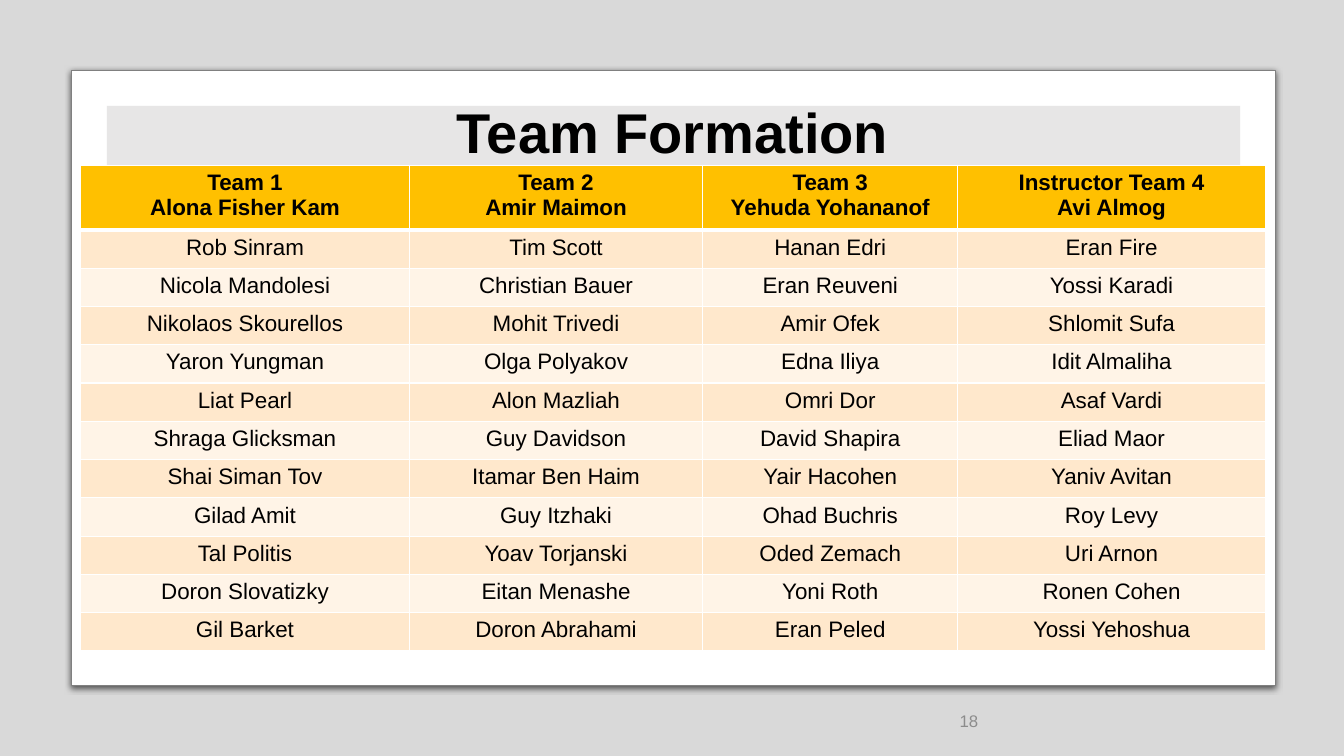
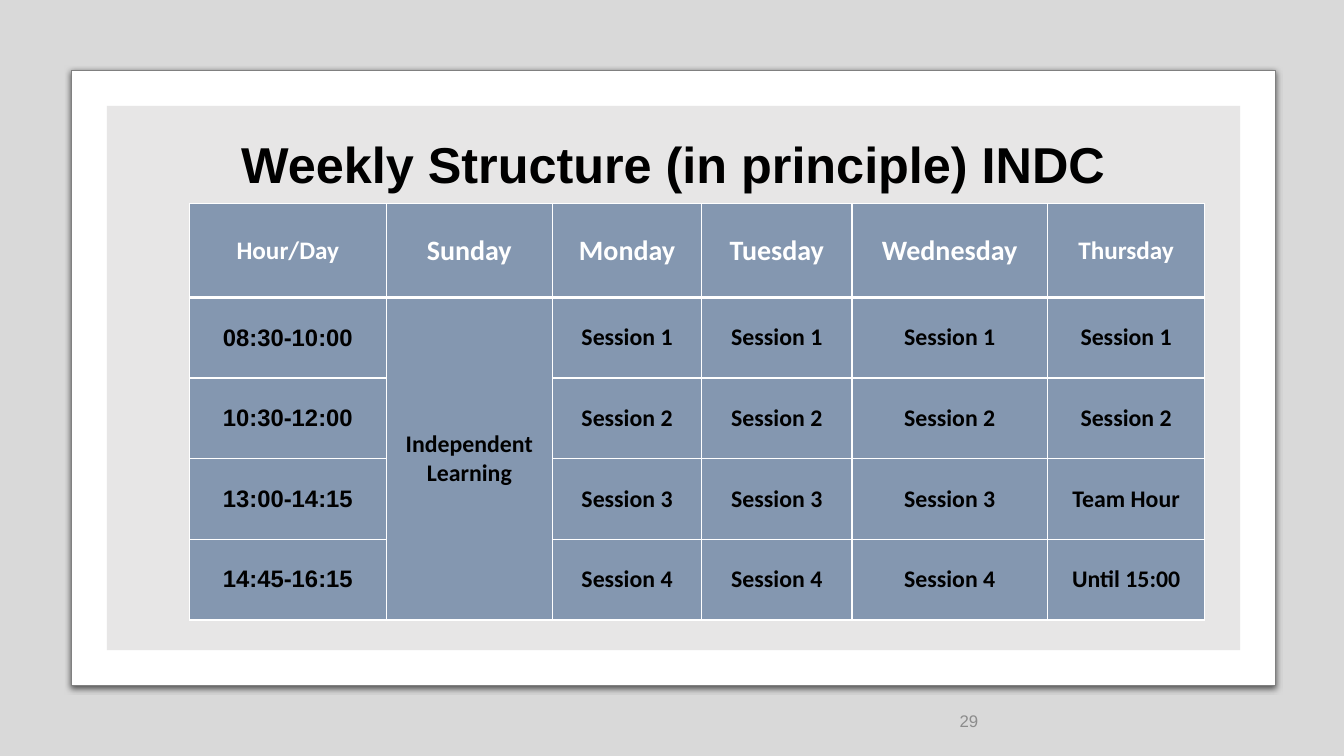
from lxml import etree
from pptx import Presentation
from pptx.dml.color import RGBColor
from pptx.enum.shapes import MSO_SHAPE
from pptx.enum.text import MSO_ANCHOR, PP_ALIGN
from pptx.oxml import parse_xml
from pptx.oxml.ns import nsdecls, qn
from pptx.util import Inches, Pt

COLORS = {
    "black": "000000", "white": "FFFFFF", "edge": "808080", "panel": "E7E6E6",
    "number": "8C8C8C", "gold": "FFC000", "peach": "FFE8CC", "cream": "FFF4E7",
    "slate": "8497B0",
}
TITLE = {"name": "Arial", "bold": True, "color": "black"}
NUMBER = {"name": "Arial", "size": Pt(12), "color": "number"}
TEAM_HEAD = {"name": "Arial", "size": Pt(16), "bold": True, "color": "black"}
TEAM_BODY = {**TEAM_HEAD, "bold": False}
DAY_HEAD = {"name": "Calibri", "size": Pt(20), "bold": True, "color": "white"}
DAY_EDGE = {**DAY_HEAD, "size": Pt(18)}
SESSION = {"name": "Calibri", "size": Pt(17), "bold": True, "color": "black"}
HOURS = {**SESSION, "name": "Arial"}
ROOMY = {"margin_left": Inches(0.17), "margin_right": Inches(0.17),
         "margin_top": Inches(0.08), "margin_bottom": Inches(0.08),
         "vertical_anchor": MSO_ANCHOR.MIDDLE}

TEAMS = [
    ["Team 1\nAlona Fisher Kam", "Team 2\nAmir Maimon",
     "Team 3\nYehuda Yohananof", "Instructor Team 4\nAvi Almog"],
    ["Rob Sinram", "Tim Scott", "Hanan Edri", "Eran Fire"],
    ["Nicola Mandolesi", "Christian Bauer", "Eran Reuveni", "Yossi Karadi"],
    ["Nikolaos Skourellos", "Mohit Trivedi", "Amir Ofek", "Shlomit Sufa"],
    ["Yaron Yungman", "Olga Polyakov", "Edna Iliya", "Idit Almaliha"],
    ["Liat Pearl", "Alon Mazliah", "Omri Dor", "Asaf Vardi"],
    ["Shraga Glicksman", "Guy Davidson", "David Shapira", "Eliad Maor"],
    ["Shai Siman Tov", "Itamar Ben Haim", "Yair Hacohen", "Yaniv Avitan"],
    ["Gilad Amit", "Guy Itzhaki", "Ohad Buchris", "Roy Levy"],
    ["Tal Politis", "Yoav Torjanski", "Oded Zemach", "Uri Arnon"],
    ["Doron Slovatizky", "Eitan Menashe", "Yoni Roth", "Ronen Cohen"],
    ["Gil Barket", "Doron Abrahami", "Eran Peled", "Yossi Yehoshua"],
]
WEEK = [
    ["Hour/Day", "Sunday", "Monday", "Tuesday", "Wednesday", "Thursday"],
    ["08:30-10:00", "Independent Learning"] + ["Session 1"] * 4,
    ["10:30-12:00", ""] + ["Session 2"] * 4,
    ["13:00-14:15", ""] + ["Session 3"] * 3 + ["Team Hour"],
    ["14:45-16:15", ""] + ["Session 4"] * 3 + ["Until 15:00"],
]


def rgb(key):
    return RGBColor.from_string(COLORS[key])


def set_attributes(target, values):
    for key, value in values.items():
        setattr(target, key, value)


def write(tf, text, style, align):
    """Fill a text frame, one paragraph per line of text."""
    for i, line in enumerate(text.split("\n")):
        p = tf.paragraphs[0] if i == 0 else tf.add_paragraph()
        p.alignment = align
        r = p.add_run()
        r.text = line
        set_attributes(r.font, {k: v for k, v in style.items() if k != "color"})
        r.font.color.rgb = rgb(style["color"])


def add_text(s, box, text, style, align):
    tf = s.shapes.add_textbox(*map(Inches, box)).text_frame
    set_attributes(tf, {"word_wrap": True, "vertical_anchor": MSO_ANCHOR.MIDDLE})
    write(tf, text, style, align)
    return tf.paragraphs[0]


def add_panel(s, kind, box, fill):
    sp = s.shapes.add_shape(kind, *map(Inches, box))
    sp.shadow.inherit = False
    sp.fill.solid()
    sp.fill.fore_color.rgb = rgb(fill)
    sp.line.fill.background()
    return sp


def add_frame(s):
    """Draw the tinted backdrop, the white card with its shadow and the grey panel."""
    backdrop = add_panel(s, MSO_SHAPE.RECTANGLE, (0, 0, 13.33, 7.5), "black")
    color = backdrop.fill._xPr.find(qn("a:solidFill"))[0]
    etree.SubElement(color, qn("a:alpha"), val="15000")

    card = add_panel(s, MSO_SHAPE.ROUNDED_RECTANGLE, (0.71, 0.7, 11.94, 6.1), "white")
    card.adjustments[0] = 0
    card.line.color.rgb = rgb("edge")
    card.line.width = Pt(0.75)
    card._element.spPr.find(qn("a:effectLst")).append(parse_xml(
        f'<a:outerShdw {nsdecls("a")} blurRad="{Pt(4.5)}" dist="{Pt(1.5)}" '
        f'dir="5400000" rotWithShape="0"><a:srgbClr val="{COLORS["black"]}">'
        '<a:alpha val="63000"/></a:srgbClr></a:outerShdw>'))

    add_panel(s, MSO_SHAPE.RECTANGLE, (1.06, 1.05, 11.24, 5.4), "panel")


def outline_xml(tag, width):
    return parse_xml(
        f'<a:{tag} {nsdecls("a")} w="{Pt(width)}"><a:solidFill>'
        f'<a:srgbClr val="{COLORS["white"]}"/></a:solidFill></a:{tag}>')


def add_title(s, box, text, size):
    p = add_text(s, box, text, {**TITLE, "size": Pt(size)}, PP_ALIGN.CENTER)
    p.line_spacing = 0.9
    p.runs[0].font._element.insert(0, outline_xml("ln", 0.75))


def new_slide(prs, title, title_box, title_size, number):
    s = prs.slides.add_slide(prs.slide_layouts[6])
    add_frame(s)
    add_title(s, title_box, title, title_size)
    add_text(s, (9.42, 6.95, 3, 0.4), number, NUMBER, PP_ALIGN.LEFT)
    return s


def add_borders(cell, row):
    """White rules, heavier between the header and the body."""
    widths = {"lnL": 1, "lnR": 1, "lnT": 3 if row == 1 else 1, "lnB": 3 if row == 0 else 1}
    for tag, width in widths.items():
        cell._tc.get_or_add_tcPr().append(outline_xml(tag, width))


def add_grid(s, left, top, cols, heights, rows, look, layout):
    """Build a table; look(row, column) gives the fill and text style of a cell."""
    table = s.shapes.add_table(len(rows), len(cols), Inches(left), Inches(top),
                               Inches(sum(cols)), Inches(sum(heights))).table
    for column, width in zip(table.columns, cols):
        column.width = Inches(width)
    for i, (row, height) in enumerate(zip(rows, heights)):
        table.rows[i].height = Inches(height)
        for j, text in enumerate(row):
            cell = table.cell(i, j)
            fill, style = look(i, j)
            set_attributes(cell, layout)
            add_borders(cell, i)
            cell.fill.solid()
            cell.fill.fore_color.rgb = rgb(fill)
            if text:
                write(cell.text_frame, text, style, PP_ALIGN.CENTER)
    return table


def team_look(row, column):
    if row == 0:
        return "gold", TEAM_HEAD
    return ("peach" if row % 2 else "cream"), TEAM_BODY


def week_look(row, column):
    if row == 0:
        return "slate", DAY_EDGE if column in (0, 5) else DAY_HEAD
    return "slate", HOURS if column == 0 else SESSION


def add_teams_slide(prs):
    s = new_slide(prs, "Team Formation", (1.4, 1.02, 10.54, 0.65), 40, "18")
    add_grid(s, 0.8, 1.64, [3.26, 2.91, 2.53, 3.05], [0.64] + [0.38] * 11,
             TEAMS, team_look, {})


def add_week_slide(prs):
    s = new_slide(prs, "Weekly Structure (in principle) INDC",
                  (1.41, 1.15, 10.54, 1.02), 36, "29")
    table = add_grid(s, 1.88, 2.02, [1.95, 1.65, 1.48, 1.49, 1.94, 1.56],
                     [0.93] + [0.8] * 4, WEEK, week_look, ROOMY)
    table.cell(1, 1).merge(table.cell(4, 1))


def main():
    prs = Presentation()
    prs.slide_width, prs.slide_height = Inches(13.33), Inches(7.5)
    add_teams_slide(prs)
    add_week_slide(prs)
    prs.save("out.pptx")


if __name__ == "__main__":
    main()
